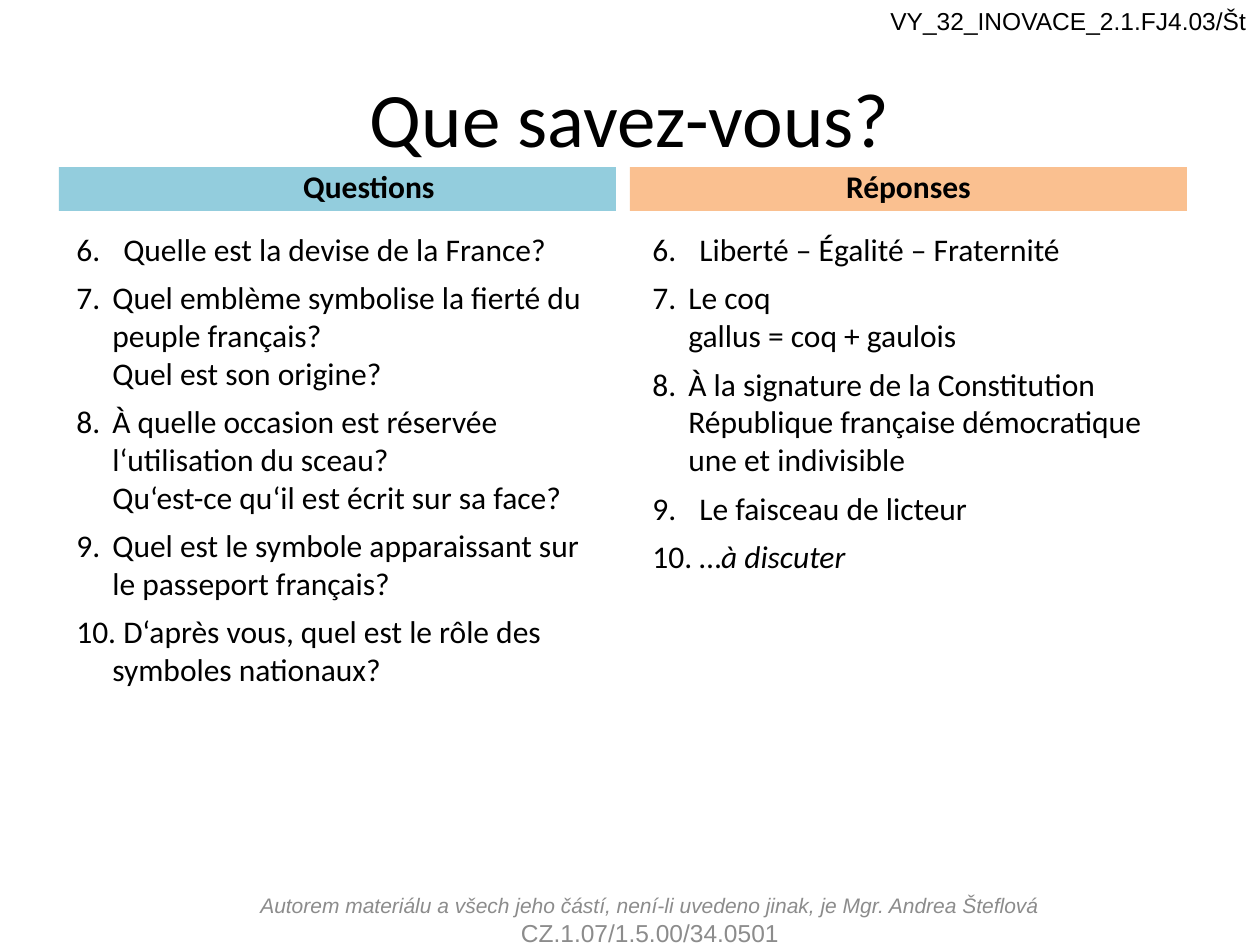
from pptx import Presentation
from pptx.dml.color import RGBColor
from pptx.enum.shapes import MSO_SHAPE
from pptx.enum.text import MSO_ANCHOR, PP_ALIGN
from pptx.oxml.ns import qn
from pptx.util import Pt
from lxml import etree

RECT = MSO_SHAPE.RECTANGLE
LEFT, MID = PP_ALIGN.LEFT, PP_ALIGN.CENTER
TOP, CENTER, LOW = MSO_ANCHOR.TOP, MSO_ANCHOR.MIDDLE, MSO_ANCHOR.BOTTOM
SCALE = 914400 / 126
NEAR, WIDE = 36, 47


def emu(px):
    return round(px * SCALE)


def color(code):
    return RGBColor.from_string(code)


class Deck:
    """Builds the slide from boxes, bars and numbered lists in one style."""

    def __init__(self, wide, high):
        self.file = Presentation()
        self.file.slide_width, self.file.slide_height = emu(wide), emu(high)
        self.slide = self.file.slides.add_slide(self.file.slide_layouts[6])

    def frame(self, area, anchor=TOP):
        box = self.slide.shapes.add_textbox(*map(emu, area))
        frame = box.text_frame
        frame.word_wrap, frame.vertical_anchor = True, anchor
        return frame

    def style(self, para, size, font="Calibri", ink="000000", align=LEFT,
              bold=False, italic=None):
        para.alignment = align
        face = para.font
        face.name, face.size, face.bold, face.italic = font, Pt(size), bold, italic
        face.color.rgb = color(ink)

    def indent(self, para, left, first):
        props = para._p.get_or_add_pPr()
        props.set("marL", str(emu(left)))
        props.set("indent", str(emu(first)))
        return props

    def text(self, area, lines, anchor=TOP):
        frame = self.frame(area, anchor)
        for i, (words, look) in enumerate(lines):
            para = frame.add_paragraph() if i else frame.paragraphs[0]
            para.text = words
            self.style(para, **look)

    def bar(self, area, words, fill, shift=0, first=0):
        bar = self.slide.shapes.add_shape(RECT, *map(emu, area))
        bar.shadow.inherit = False
        bar.fill.solid()
        bar.fill.fore_color.rgb = color(fill)
        bar.line.fill.background()
        bar.text_frame.vertical_anchor = LOW
        para = bar.text_frame.paragraphs[0]
        para.text = words
        self.style(para, 18, align=MID, bold=True)
        self.indent(para, shift, first)

    def list(self, area, items):
        frame = self.frame(area)
        for i, (words, start, hang, before, after) in enumerate(items):
            para = frame.add_paragraph() if i else frame.paragraphs[0]
            plain, _, slant = words.partition("*")
            para.add_run().text = plain
            if slant:
                run = para.add_run()
                run.text, run.font.italic = slant, True
            self.style(para, 18)
            para.space_before, para.space_after = Pt(before), Pt(after)
            props = self.indent(para, hang, -hang if start else 0)
            if start:
                mark = etree.Element(qn("a:buAutoNum"), type="arabicPeriod",
                                     startAt=str(start))
                props.insert_element_before(mark, "a:tabLst", "a:defRPr")


ASKS = [
    ("Quelle est la devise de la France?", 6, WIDE, 6, 0),
    ("Quel emblème symbolise la fierté du peuple français?", 6, NEAR, 6, 0),
    ("Quel est son origine?", None, NEAR, 0, 0),
    ("À quelle occasion est réservée l‘utilisation du sceau?", 8, NEAR, 6, 0),
    ("Qu‘est-ce qu‘il est écrit sur sa face?", None, NEAR, 0, 0),
    ("Quel est le symbole apparaissant sur le passeport français?", 9, NEAR, 6, 0),
    (" D‘après vous, quel est le rôle des symboles nationaux?", 9, NEAR, 6, 0),
]
REPLIES = [
    ("Liberté – Égalité – Fraternité", 6, WIDE, 6, 0),
    ("Le coq", 6, NEAR, 6, 0),
    ("gallus = coq + gaulois", None, NEAR, 0, 6),
    ("À la signature de la Constitution", 8, NEAR, 0, 0),
    ("République française démocratique une et indivisible", None, NEAR, 0, 0),
    ("Le faisceau de licteur", 9, WIDE, 6, 0),
    ("…*à discuter", 9, WIDE, 6, 0),
]


def main():
    deck = Deck(1260, 945)
    deck.text((63, 38, 1134, 157),
              [("Que savez-vous?", dict(size=44, align=MID))], CENTER)
    deck.bar((59, 167, 557, 44), "Questions", "93CDDD", 99, -36)
    deck.list((64, 224, 557, 617), ASKS)
    deck.bar((630, 167, 557, 44), "Réponses", "FAC090")
    deck.list((640, 224, 557, 617), REPLIES)
    deck.text((878, 0, 382, 43),
              [("VY_32_INOVACE_2.1.FJ4.03/Št", dict(size=14, font="Arial"))])
    note = dict(font="Arial", ink="8C8C8C", align=MID)
    deck.text((246, 895, 808, 50), [
        ("Autorem materiálu a všech jeho částí, není-li uvedeno jinak, "
         "je Mgr. Andrea Šteflová", dict(note, size=12, italic=True)),
        ("CZ.1.07/1.5.00/34.0501", dict(note, size=14)),
    ], CENTER)
    deck.file.save("out.pptx")


if __name__ == "__main__":
    main()
